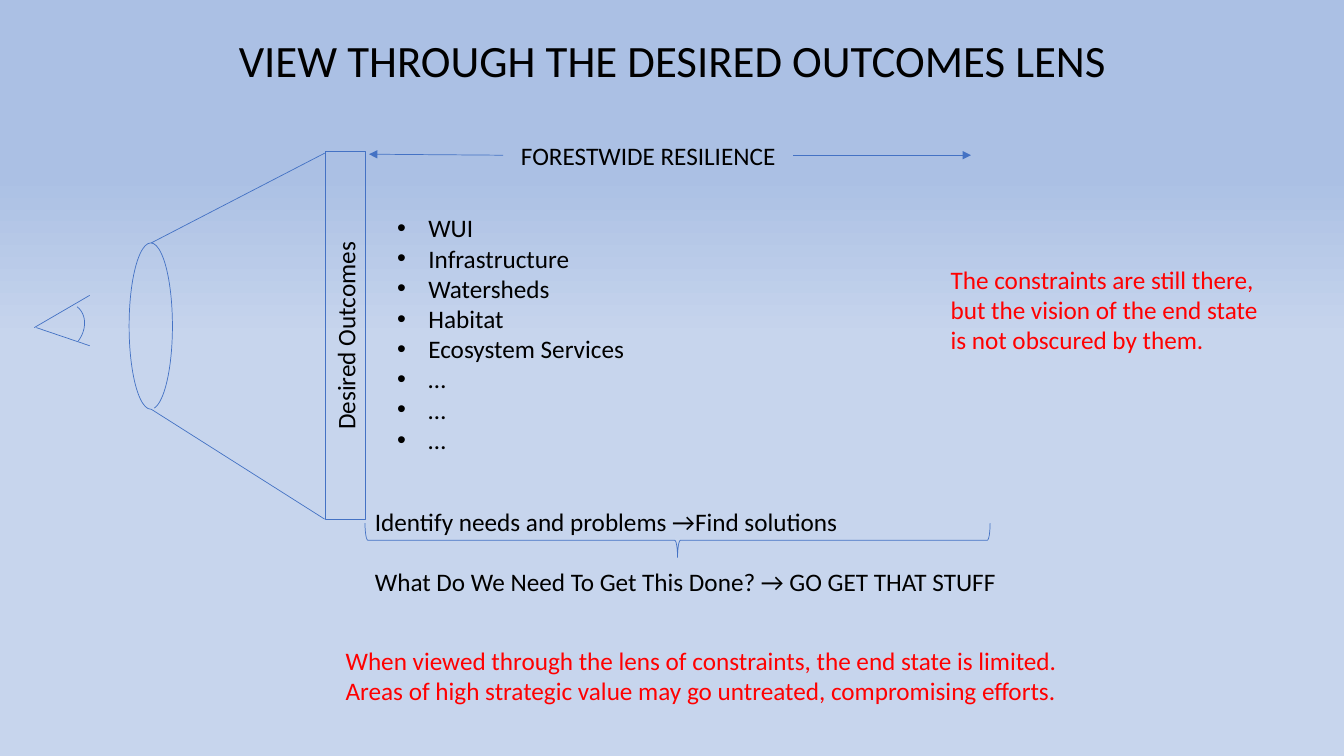
from dataclasses import dataclass

from lxml.etree import SubElement
from pptx import Presentation
from pptx.dml.color import RGBColor
from pptx.enum.shapes import MSO_CONNECTOR as Connector, MSO_SHAPE as Shape
from pptx.enum.text import MSO_ANCHOR as Anchor, PP_ALIGN as Align
from pptx.oxml.ns import qn
from pptx.slide import Slide
from pptx.util import Inches, Pt


@dataclass(frozen=True)
class Theme:
    font: str = "Calibri"
    title_size: int = 32
    body_size: int = 18
    text: str = "000000"
    warning: str = "FF0000"
    line: str = "4472C4"
    thin: float = 0.5
    frame: float = 0.75
    sky: tuple = ((0, "ABC0E4"), (23, "ABC0E4"), (45, "C7D5ED"))


THEME = Theme()


@dataclass(frozen=True)
class Line:
    start: tuple[float, float]
    end: tuple[float, float]
    arrow: bool = False


@dataclass(frozen=True)
class Outline:
    kind: Shape
    at: tuple[float, float, float, float]
    rotation: float
    width: float = THEME.thin
    adjustments: tuple[float, ...] = ()
    label: str = ""


@dataclass(frozen=True)
class Text:
    at: tuple[float, float, float, float]
    text: str
    size: int = THEME.body_size
    color: str = THEME.text
    align: Align = Align.LEFT
    wrap: bool = True
    bullets: bool = False


# Eye, lens cone, and the arrows either side of the heading
LINES = [
    Line((0.34, 3.25), (0.89, 2.93)),
    Line((0.36, 3.25), (0.89, 3.43)),
    Line((1.5, 2.41), (3.22, 1.52)),
    Line((1.5, 4.06), (3.22, 5.15)),
    Line((7.87, 1.54), (9.63, 1.54), arrow=True),
    Line((4.99, 1.54), (3.66, 1.53), arrow=True),
]

# Pupil, lens, outcomes panel and brace
OUTLINES = [
    Outline(Shape.ARC, (0.39, 2.99, 0.43, 0.53), 37.3),
    Outline(Shape.ARC, (1.28, 2.41, 0.43, 1.65), 180, adjustments=(162, 160.53)),
    Outline(Shape.RECTANGLE, (1.6, 3.13, 3.65, 0.4), 270, THEME.frame,
            label="Desired Outcomes"),
    Outline(Shape.RIGHT_BRACE, (6.55, 2.26, 0.34, 6.2), 90),
]

TEXTS = [
    Text((2.27, 0.28, 8.9, 0.64), "VIEW THROUGH THE DESIRED OUTCOMES LENS",
         size=THEME.title_size, wrap=False),
    Text((4.99, 1.34, 2.88, 0.4), "FORESTWIDE RESILIENCE", align=Align.CENTER),
    Text((3.84, 2.06, 2.48, 2.52),
         "WUI\nInfrastructure\nWatersheds\nHabitat\nEcosystem Services\n…\n…\n…",
         wrap=False, bullets=True),
    Text((3.62, 4.97, 5.56, 0.71), "Identify needs and problems →Find solutions"),
    Text((3.62, 5.57, 6.82, 0.4),
         "What Do We Need To Get This Done? → GO GET THAT STUFF"),
    Text((9.33, 2.57, 3.43, 1.62),
         "The constraints are still there, but the vision of the end state "
         "is not obscured by them.", color=THEME.warning),
    Text((3.33, 6.35, 7.4, 0.71),
         "When viewed through the lens of constraints, the end state is limited.\n"
         "Areas of high strategic value may go untreated, compromising efforts.",
         color=THEME.warning, wrap=False),
]


def paint_background(page: Slide) -> None:
    fill = page.background.fill
    fill.gradient()
    fill.gradient_angle = 270
    stops = page._element.find(".//" + qn("a:gsLst"))
    stops.clear()
    for percent, color in THEME.sky:
        stop = SubElement(stops, qn("a:gs"), pos=str(percent * 1000))
        SubElement(stop, qn("a:srgbClr"), val=color)


def style_text(frame, size: int, color: str, align: Align) -> None:
    for para in frame.paragraphs:
        para.alignment = align
        for span in para.runs:
            span.font.name = THEME.font
            span.font.size = Pt(size)
            span.font.color.rgb = RGBColor.from_string(color)


def add_bullet(para) -> None:
    indent = Inches(0.31)
    properties = para._p.get_or_add_pPr()
    properties.set("marL", str(indent))
    properties.set("indent", str(-indent))
    SubElement(properties, qn("a:buFont"), typeface="Arial")
    SubElement(properties, qn("a:buChar"), char="•")


def draw_line(page: Slide, line: Line) -> None:
    points = [Inches(value) for value in line.start + line.end]
    connector = page.shapes.add_connector(Connector.STRAIGHT, *points)
    connector.line.color.rgb = RGBColor.from_string(THEME.line)
    connector.line.width = Pt(THEME.thin)
    if line.arrow:
        SubElement(connector.line._get_or_add_ln(), qn("a:tailEnd"), type="triangle")
    SubElement(connector._element.spPr, qn("a:effectLst"))


def draw_outline(page: Slide, outline: Outline) -> None:
    shape = page.shapes.add_shape(outline.kind, *map(Inches, outline.at))
    shape.rotation = outline.rotation
    shape.shadow.inherit = False
    shape.fill.background()
    shape.line.color.rgb = RGBColor.from_string(THEME.line)
    shape.line.width = Pt(outline.width)
    for index, value in enumerate(outline.adjustments):
        shape.adjustments[index] = value
    if outline.label:
        frame = shape.text_frame
        frame.text = outline.label
        frame.vertical_anchor = Anchor.TOP
        style_text(frame, THEME.body_size, THEME.text, Align.CENTER)


def draw_text(page: Slide, item: Text) -> None:
    box = page.shapes.add_textbox(*map(Inches, item.at))
    frame = box.text_frame
    frame.word_wrap = item.wrap
    frame.text = item.text
    style_text(frame, item.size, item.color, item.align)
    if item.bullets:
        for para in frame.paragraphs:
            add_bullet(para)


def main() -> None:
    deck = Presentation()
    deck.slide_width, deck.slide_height = Inches(13.33), Inches(7.5)
    page = deck.slides.add_slide(deck.slide_layouts[6])
    paint_background(page)
    for line in LINES:
        draw_line(page, line)
    for outline in OUTLINES:
        draw_outline(page, outline)
    for item in TEXTS:
        draw_text(page, item)
    deck.save("out.pptx")


if __name__ == "__main__":
    main()
